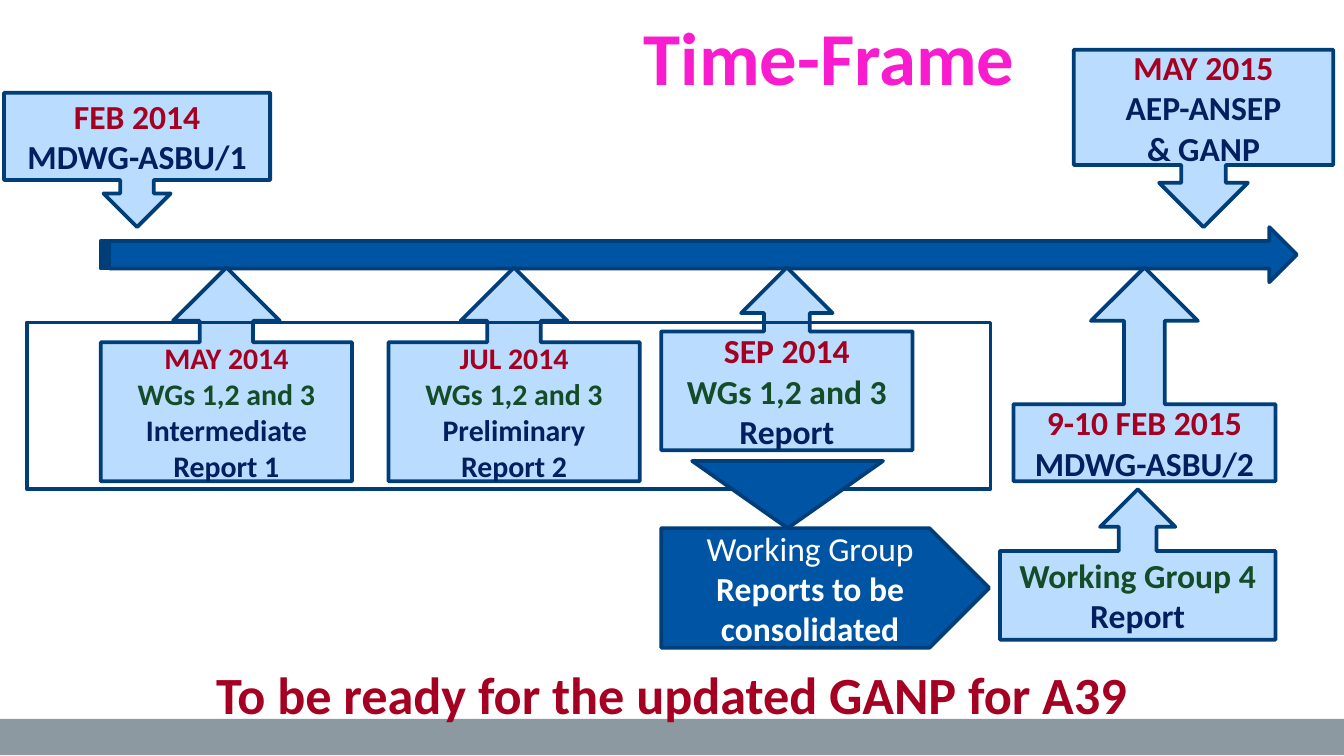
"""Build the Time-Frame slide: a timeline arrow with milestone callouts."""
from pptx import Presentation
from pptx.dml.color import RGBColor
from pptx.enum.shapes import MSO_SHAPE
from pptx.enum.text import MSO_ANCHOR, PP_ALIGN
from pptx.util import Inches, Pt

UP = MSO_SHAPE.UP_ARROW_CALLOUT
DOWN = MSO_SHAPE.DOWN_ARROW_CALLOUT
RECTANGLE = MSO_SHAPE.RECTANGLE
STRIPED_ARROW = MSO_SHAPE.STRIPED_RIGHT_ARROW
PENTAGON = MSO_SHAPE.PENTAGON
TRIANGLE = MSO_SHAPE.ISOSCELES_TRIANGLE
TOP, MIDDLE = MSO_ANCHOR.TOP, MSO_ANCHOR.MIDDLE
CENTER = PP_ALIGN.CENTER

COLORS = {
    "gray": "8C99A1", "pink": "F81CCE", "blue": "0054A4", "outline": "003E79",
    "sky": "BADDFF", "red": "A50021", "navy": "002060", "green": "144C27",
    "white": "FFFFFF",
}


def add_paragraph(frame, text, first=False, size=18, color="navy", bold=True):
    para = frame.paragraphs[0] if first else frame.add_paragraph()
    para.alignment = CENTER
    span = para.add_run()
    span.text = text
    span.font.name = "Calibri"
    span.font.size = Pt(size)
    span.font.bold = bold
    span.font.color.rgb = RGBColor.from_string(COLORS[color])


def add_block(kind, place, fill=None, outline="outline"):
    block = page.shapes.add_shape(kind, *map(Inches, place))
    block.shadow.inherit = False
    if fill:
        block.fill.solid()
        block.fill.fore_color.rgb = RGBColor.from_string(COLORS[fill])
    else:
        block.fill.background()
    if outline:
        block.line.color.rgb = RGBColor.from_string(COLORS[outline])
        block.line.width = Pt(2)
    else:
        block.line.fill.background()
    block.text_frame.word_wrap = True
    block.text_frame.vertical_anchor = MIDDLE
    return block


deck = Presentation()
deck.slide_width = Inches(10)
deck.slide_height = deck.slide_width * 9 // 16
page = deck.slides.add_slide(deck.slide_layouts[6])

add_block(RECTANGLE, (0, 5.35, 10, 0.27), "gray", outline=None)
add_block(STRIPED_ARROW, (0.75, 1.69, 8.9, 0.41), "blue")

groups = ("WGs 1,2 and 3", "green")
milestones = [
    (DOWN, (7.99, 0.37, 1.93, 1.32), {}, 18,
     [("MAY 2015", "red"), ("AEP-ANSEP", "navy"), ("& GANP", "navy")]),
    (DOWN, (0.03, 0.69, 1.98, 1), {}, 18,
     [("FEB 2014", "red"), ("MDWG-ASBU/1", "navy")]),
    (UP, (7.54, 1.99, 1.95, 1.59), {0: 0.19, 3: 0.36}, 18,
     [("9-10 FEB 2015", "red"), ("MDWG-ASBU/2", "navy")]),
    (UP, (0.75, 1.99, 1.87, 1.59), {}, 16,
     [("MAY 2014", "red"), groups, ("Intermediate Report 1", "navy")]),
    (UP, (2.89, 1.99, 1.87, 1.59), {}, 16,
     [("JUL 2014", "red"), groups, ("Preliminary Report 2", "navy")]),
    (UP, (4.92, 1.99, 1.87, 1.36), {}, 18,
     [("SEP 2014", "red"), groups, ("Report", "navy")]),
    (UP, (7.44, 3.64, 2.05, 1.12), {3: 0.59}, 18,
     [("Working Group 4", "green"), ("Report", "navy")]),
]
for kind, place, adjustments, size, lines in milestones:
    callout = add_block(kind, place, "sky")
    for index, value in adjustments.items():
        callout.adjustments[index] = value
    for number, (text, color) in enumerate(lines):
        add_paragraph(callout.text_frame, text, first=number == 0, size=size, color=color)

consolidation = add_block(PENTAGON, (4.92, 3.93, 2.44, 0.89), "blue")
add_paragraph(consolidation.text_frame, "Working Group", first=True, color="white", bold=False)
add_paragraph(consolidation.text_frame, "Reports to be consolidated", color="white")

add_block(RECTANGLE, (0.2, 2.4, 7.17, 1.24))
pointer = add_block(TRIANGLE, (5.15, 3.43, 1.42, 0.5), "blue")
pointer.rotation = 180

for text, place, size, color in [
    ("Time-Frame", (3.82, 0.03, 4.7, 0.6), 40, "pink"),
    ("To be ready for the updated GANP for A39", (0.35, 4.88, 9.29, 0.57), 28, "red"),
]:
    box = page.shapes.add_textbox(*map(Inches, place))
    box.text_frame.word_wrap = True
    box.text_frame.vertical_anchor = TOP
    add_paragraph(box.text_frame, text, first=True, size=size, color=color)

deck.save("out.pptx")
